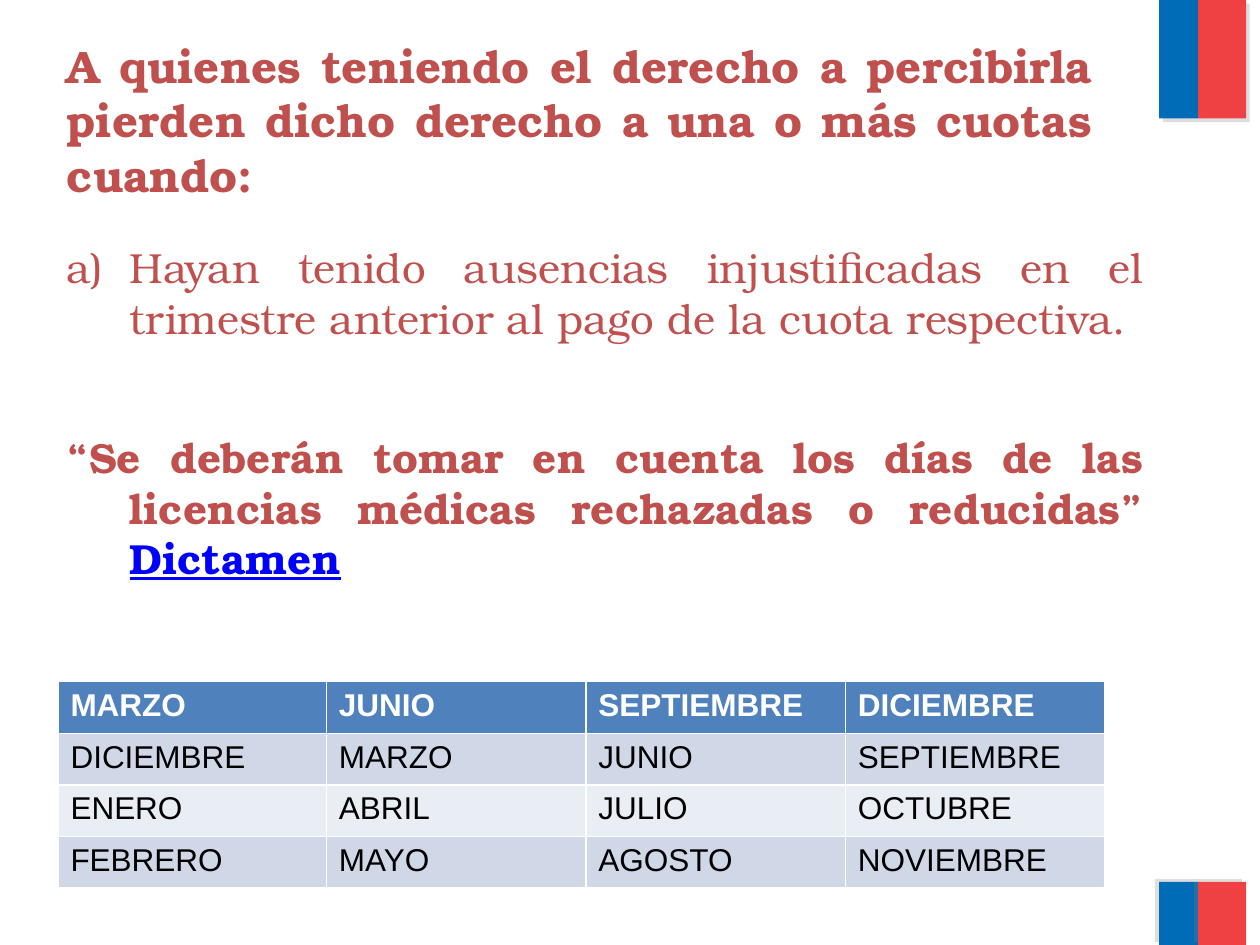
from lxml.etree import SubElement
from pptx import Presentation
from pptx.dml.color import RGBColor
from pptx.enum.shapes import MSO_SHAPE
from pptx.enum.text import MSO_ANCHOR, MSO_AUTO_SIZE, PP_ALIGN
from pptx.oxml.ns import qn
from pptx.util import Inches, Pt

BLUE = RGBColor(0x00, 0x6C, 0xB7)
RED = RGBColor(0xEF, 0x41, 0x44)
BRICK = RGBColor(0xC0, 0x50, 0x4D)
LINK = RGBColor(0x00, 0x00, 0xFF)
HEAD = RGBColor(0x4F, 0x81, 0xBD)
BANDS = RGBColor(0xE9, 0xED, 0xF4), RGBColor(0xD0, 0xD8, 0xE8)
WHITE = RGBColor(0xFF, 0xFF, 0xFF)
BLACK = RGBColor(0x00, 0x00, 0x00)
SERIF, SANS = "TeX Gyre Bonum", "Arial"

TITLE = "A quienes teniendo el derecho a percibirla pierden dicho derecho a una o más cuotas cuando:"
BODY = [
    (0, False, [("a)\tHayan tenido ausencias injustificadas en el trimestre "
                 "anterior al pago de la cuota respectiva.", BRICK)]),
    (51, True, [("“Se deberán tomar en cuenta los días de las licencias "
                 "médicas rechazadas o reducidas” ", BRICK),
                ("Dictamen", LINK)]),
]
MONTHS = [
    ("MARZO", "JUNIO", "SEPTIEMBRE", "DICIEMBRE"),
    ("DICIEMBRE", "MARZO", "JUNIO", "SEPTIEMBRE"),
    ("ENERO", "ABRIL", "JULIO", "OCTUBRE"),
    ("FEBRERO", "MAYO", "AGOSTO", "NOVIEMBRE"),
]
WIDTHS = [2.13, 2.06, 2.06, 2.06]
ROW = 0.41
STRIPES = [(9.2, 0.31, BLUE), (9.51, 0.38, RED)]
FLAGS = [(0, 0.94, 45), (7, 0.5, 215)]


def inches(*sizes):
    """Turn lengths in inches into slide units."""
    return [Inches(size) for size in sizes]


def add_stripe(slide, box, color, angle):
    """Draw one flag stripe with a hard grey shadow."""
    stripe = slide.shapes.add_shape(MSO_SHAPE.RECTANGLE, *inches(*box))
    stripe.fill.solid()
    stripe.fill.fore_color.rgb = color
    stripe.line.fill.background()
    stripe.shadow.inherit = False
    effects = stripe.element.spPr.find(qn("a:effectLst"))
    shade = SubElement(effects, qn("a:outerShdw"), blurRad="0", dist=str(Pt(3)),
                       dir=str(angle * 60000), algn="ctr", rotWithShape="0")
    tint = SubElement(shade, qn("a:srgbClr"), val="808080")
    SubElement(tint, qn("a:alpha"), val="25000")


def set_font(font, name, size, bold, color=None):
    """Set the face, size, weight and colour of a font."""
    font.name, font.size, font.bold = name, Pt(size), bold
    if color is not None:
        font.color.rgb = color


def add_title(slide):
    """Place and format the title."""
    title = slide.shapes.title
    title.left, title.top, title.width, title.height = inches(0.43, 0.25, 8.35, 1.4)
    frame = title.text_frame
    frame.text = TITLE
    frame.auto_size = MSO_AUTO_SIZE.NONE
    frame.vertical_anchor = MSO_ANCHOR.TOP
    para = frame.paragraphs[0]
    para.alignment = PP_ALIGN.JUSTIFY
    set_font(para.font, SERIF, 26, True, BRICK)


def add_body(slide):
    """Write the justified paragraphs with a hanging indent."""
    frame = slide.shapes.add_textbox(*inches(0.43, 1.87, 8.74, 3.53)).text_frame
    frame.word_wrap = True
    for n, (gap, bold, runs) in enumerate(BODY):
        para = frame.add_paragraph() if n else frame.paragraphs[0]
        para.alignment = PP_ALIGN.JUSTIFY
        para.space_before = Pt(gap)
        props = para._p.get_or_add_pPr()
        props.set("marL", str(Inches(0.5)))
        props.set("indent", str(Inches(-0.5)))
        set_font(para.font, SERIF, 24, bold)
        for text, color in runs:
            run = para.add_run()
            run.text = text
            run.font.color.rgb = color
            run.font.underline = color == LINK


def add_months(slide):
    """Build the table of payment months."""
    box = inches(0.46, 5.41, sum(WIDTHS), ROW * len(MONTHS))
    table = slide.shapes.add_table(len(MONTHS), len(WIDTHS), *box).table
    for col, width in zip(table.columns, WIDTHS):
        col.width = Inches(width)
    for r, names in enumerate(MONTHS):
        table.rows[r].height = Inches(ROW)
        for c, name in enumerate(names):
            cell = table.cell(r, c)
            cell.text = name
            cell.fill.solid()
            cell.fill.fore_color.rgb = BANDS[r % 2] if r else HEAD
            set_font(cell.text_frame.paragraphs[0].font, SANS, 18, r == 0,
                     BLACK if r else WHITE)


def main():
    """Build the slide and save it."""
    deck = Presentation()
    deck.slide_width, deck.slide_height = inches(10, 7.5)
    slide = deck.slides.add_slide(deck.slide_layouts[5])
    for top, height, angle in FLAGS:
        for left, width, color in STRIPES:
            add_stripe(slide, (left, top, width, height), color, angle)
    add_body(slide)
    add_title(slide)
    add_months(slide)
    deck.save("out.pptx")


if __name__ == "__main__":
    main()
